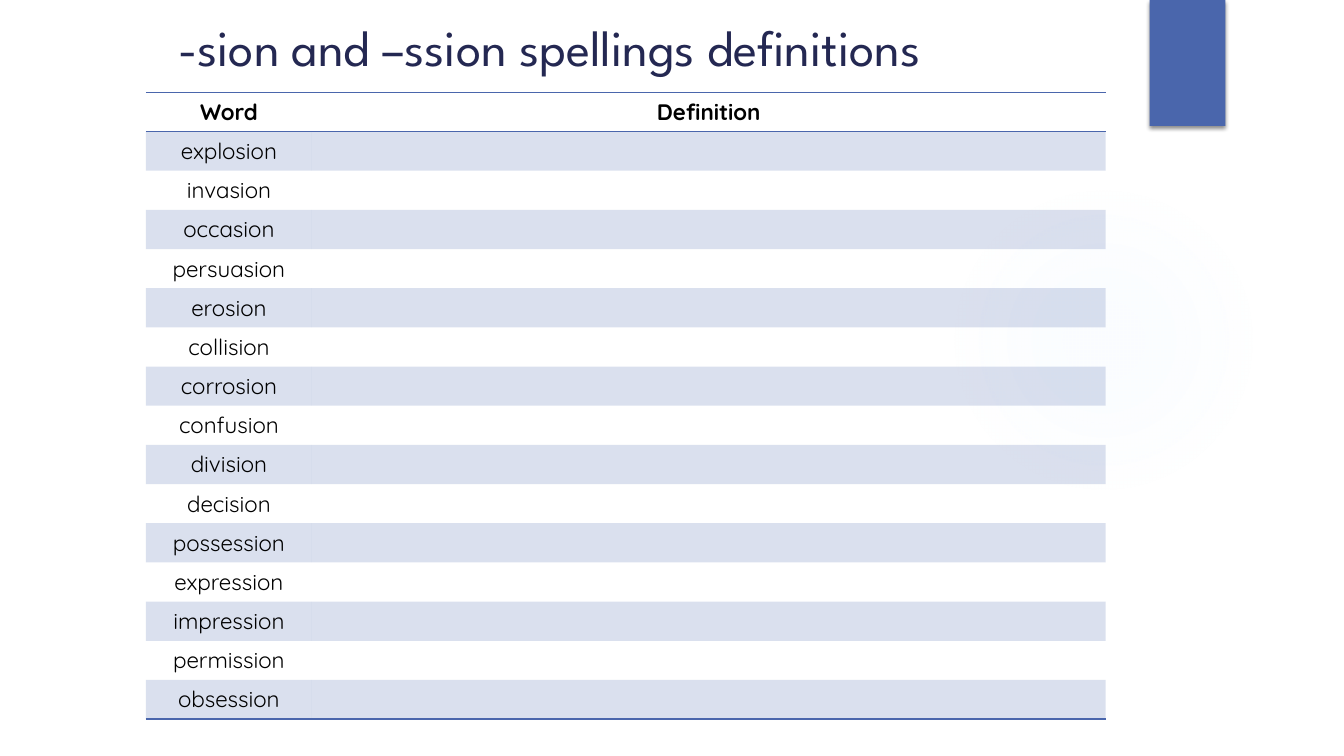
from dataclasses import dataclass
from typing import Any

from lxml.etree import SubElement
from pptx import Presentation
from pptx.dml.color import RGBColor
from pptx.enum.shapes import MSO_SHAPE
from pptx.enum.text import MSO_ANCHOR, PP_ALIGN
from pptx.oxml import parse_xml
from pptx.oxml.ns import nsdecls, qn
from pptx.util import Pt

PX = 9525
BLUE = RGBColor(0x4A, 0x66, 0xAC)
NAVY = RGBColor(0x24, 0x28, 0x52)
PALE = RGBColor(0xCD, 0xE0, 0xFB)
BLACK = RGBColor(0, 0, 0)
TITLE = "-sion and –ssion spellings definitions"
HEAD = ("Word", "Definition")
WORDS = (
    "explosion", "invasion", "occasion", "persuasion", "erosion",
    "collision", "corrosion", "confusion", "division", "decision",
    "possession", "expression", "impression", "permission", "obsession",
)
COLS = (158, 756)
STOPS = ((0, 7), (36, 6), (69, 0))
PLAIN = "{2D5ABB26-0587-4C30-8999-92F81FD0307C}"
TITLE_FONT = {"name": "League Spartan", "size": Pt(36), "bold": False}
CELL_FONT = {"name": "Quicksand", "size": Pt(16)}
CELL_BOX = {"margin_top": 0, "margin_bottom": 0, "vertical_anchor": MSO_ANCHOR.MIDDLE}


@dataclass(frozen=True)
class Box:
    """Place and size in px."""

    left: int
    top: int
    width: int
    height: int

    def emu(self) -> tuple[int, int, int, int]:
        """Give the four lengths in EMU."""
        return self.left * PX, self.top * PX, self.width * PX, self.height * PX


GLOW_BOX = Box(903, 176, 296, 296)
TAB_BOX = Box(1095, 0, 72, 120)
TITLE_BOX = Box(160, 0, 959, 88)
GRID_BOX = Box(139, 88, sum(COLS), 597)


def apply(item: Any, values: dict[str, Any]) -> None:
    """Set each named value on the item."""
    for name, value in values.items():
        setattr(item, name, value)


def add_shape(slide: Any, kind: MSO_SHAPE, box: Box) -> Any:
    """Add a blue shape with no line or shadow."""
    shape = slide.shapes.add_shape(kind, *box.emu())
    shape.shadow.inherit = False
    shape.fill.solid()
    shape.fill.fore_color.rgb = BLUE
    shape.line.fill.background()
    return shape


def add_glow(slide: Any) -> None:
    """Add the faint round glow."""
    props = add_shape(slide, MSO_SHAPE.OVAL, GLOW_BOX).element.spPr
    stops = "".join(
        f'<a:gs pos="{pos * 1000}"><a:srgbClr val="{PALE}">'
        f'<a:alpha val="{alpha * 1000}"/></a:srgbClr></a:gs>'
        for pos, alpha in STOPS
    )
    fade = parse_xml(
        f'<a:gradFill {nsdecls("a")}><a:gsLst>{stops}</a:gsLst><a:path path="circle">'
        '<a:fillToRect l="50000" t="50000" r="50000" b="50000"/></a:path></a:gradFill>'
    )
    props.replace(props.find(qn("a:solidFill")), fade)


def add_tab(slide: Any) -> None:
    """Add the blue tab and its shadow."""
    props = add_shape(slide, MSO_SHAPE.RECTANGLE, TAB_BOX).element.spPr
    shade = parse_xml(
        f'<a:outerShdw {nsdecls("a")} blurRad="{Pt(3)}" dist="{Pt(2)}" dir="5400000">'
        f'<a:srgbClr val="{BLACK}"><a:alpha val="45000"/></a:srgbClr></a:outerShdw>'
    )
    props.find(qn("a:effectLst")).append(shade)


def set_title(slide: Any) -> None:
    """Place and style the title in front of the shapes."""
    title = slide.shapes.title
    apply(title, dict(zip(("left", "top", "width", "height"), TITLE_BOX.emu())))
    frame = title.text_frame
    frame.text = TITLE
    apply(frame, {"word_wrap": True, "vertical_anchor": MSO_ANCHOR.MIDDLE})
    frame.paragraphs[0].alignment = PP_ALIGN.LEFT
    font = frame.paragraphs[0].runs[0].font
    apply(font, TITLE_FONT)
    font.color.rgb = NAVY
    slide.shapes.element.append(title.element)


def fill_cell(cell: Any, text: str, head: bool, band: bool, edges: tuple[str, ...]) -> None:
    """Write one cell with its band and edges."""
    apply(cell, CELL_BOX)
    line = cell.text_frame.paragraphs[0]
    line.alignment = PP_ALIGN.CENTER
    if text:
        run = line.add_run()
        run.text = text
        apply(run.font, CELL_FONT | {"bold": head})
        run.font.color.rgb = BLACK
    props = cell._tc.get_or_add_tcPr()
    for edge in edges:
        props.append(parse_xml(
            f'<a:{edge} {nsdecls("a")} w="{Pt(1)}"><a:solidFill>'
            f'<a:srgbClr val="{BLUE}"/></a:solidFill></a:{edge}>'
        ))
    if band:
        cell.fill.solid()
        cell.fill.fore_color.rgb = BLUE
        SubElement(next(props.find(qn("a:solidFill")).iter(qn("a:srgbClr"))), qn("a:alpha"), val="20000")
    else:
        cell.fill.background()


def add_grid(slide: Any) -> None:
    """Add the table of words."""
    rows = (HEAD, *((word, "") for word in WORDS))
    frame = slide.shapes.add_table(len(rows), len(COLS), *GRID_BOX.emu())
    next(frame.element.iter(qn("a:tableStyleId"))).text = PLAIN
    table = frame.table
    apply(table, {"first_row": False, "horz_banding": False})
    for col, width in zip(table.columns, COLS):
        col.width = width * PX
    edges = {0: ("a:lnT"[2:], "lnB"), len(WORDS): ("lnB",)}
    for at, texts in enumerate(rows):
        table.rows[at].height = GRID_BOX.height * PX // len(rows)
        for col, text in enumerate(texts):
            fill_cell(table.cell(at, col), text, at == 0, at % 2 == 1, edges.get(at, ()))


def main() -> None:
    """Build and save the slide."""
    deck = Presentation()
    apply(deck, {"slide_width": 1280 * PX, "slide_height": 720 * PX})
    slide = deck.slides.add_slide(deck.slide_layouts[5])
    add_glow(slide)
    add_tab(slide)
    set_title(slide)
    add_grid(slide)
    deck.save("out.pptx")


if __name__ == "__main__":
    main()
